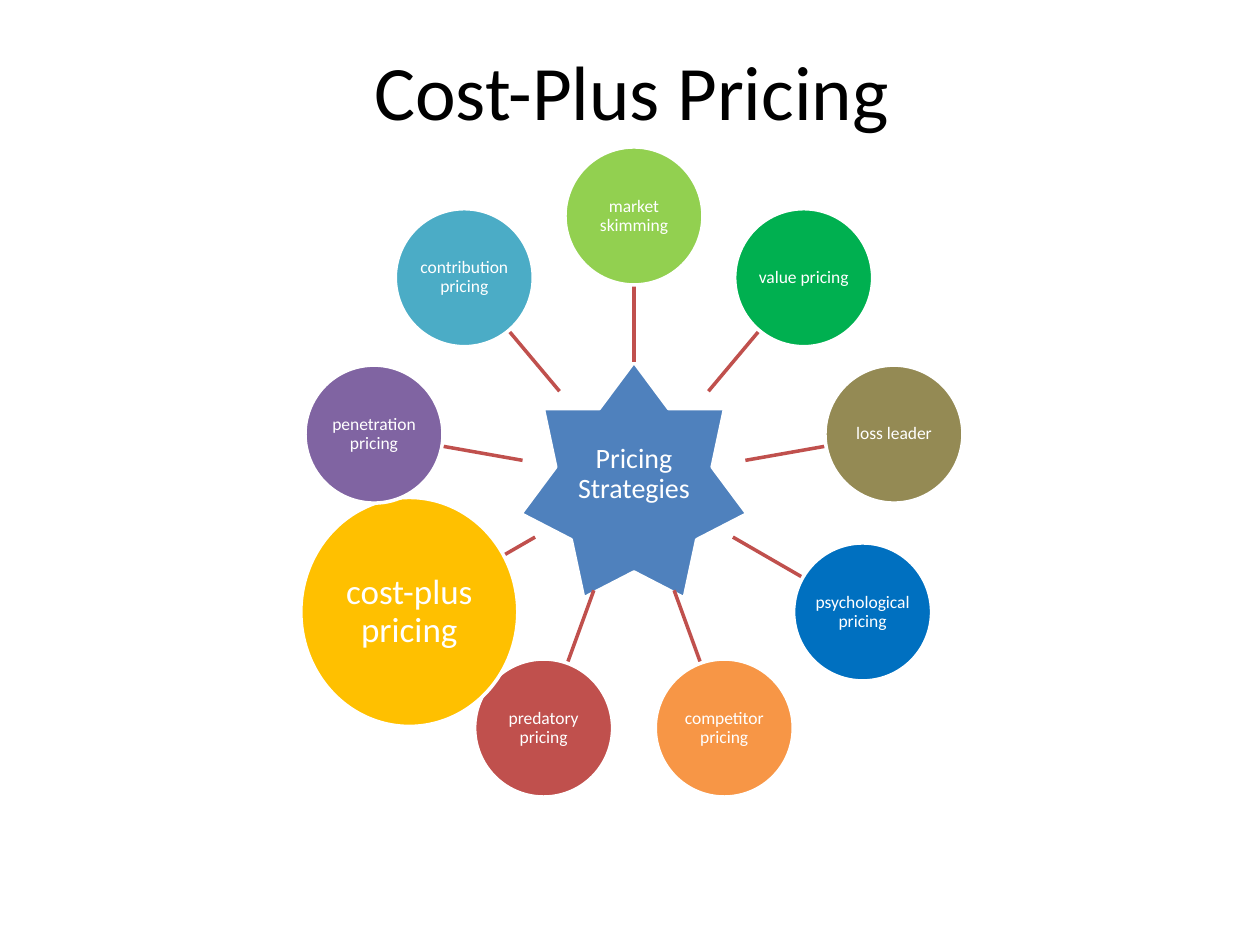
from math import cos, hypot, radians, sin

from lxml.etree import SubElement
from pptx import Presentation
from pptx.dml.color import RGBColor as RGB
from pptx.enum.shapes import MSO_CONNECTOR as LINE, MSO_SHAPE as SHAPE
from pptx.enum.text import MSO_ANCHOR as ANCHOR, PP_ALIGN as ALIGN
from pptx.oxml.ns import qn
from pptx.util import Inches, Pt

PX = Inches(1) / 126
FONT = "Calibri"
BLACK = RGB(0x00, 0x00, 0x00)
WHITE = RGB(0xFF, 0xFF, 0xFF)
BLUE = RGB(0x4F, 0x81, 0xBD)
RED = RGB(0xC0, 0x50, 0x4D)
LIME = RGB(0x92, 0xD0, 0x50)
GREEN = RGB(0x00, 0xB0, 0x50)
OLIVE = RGB(0x94, 0x8A, 0x54)
AZURE = RGB(0x00, 0x70, 0xC0)
ORANGE = RGB(0xF7, 0x96, 0x46)
GOLD = RGB(0xFF, 0xC0, 0x00)
PURPLE = RGB(0x80, 0x64, 0xA2)
TEAL = RGB(0x4B, 0xAC, 0xC6)

# Clockwise from the top
NODES = [
    ("market skimming", LIME),
    ("value pricing", GREEN),
    ("loss leader", OLIVE),
    ("psychological pricing", AZURE),
    ("competitor pricing", ORANGE),
    ("predatory pricing", RED),
    ("cost-plus pricing", GOLD),
    ("penetration pricing", PURPLE),
    ("contribution pricing", TEAL),
]
FOCUS = "cost-plus pricing"
HUB_X, HUB_Y = 634, 480
HUB_W, HUB_H = 226, 236
RING = 264
NODE = 138


def emu(*vals):
    return [round(v * PX) for v in vals]


class Page:
    """Holds the current slide and draws styled elements on it."""

    def __init__(self, deck):
        self.slide = deck.slides.add_slide(deck.slide_layouts[5])
        self.shapes = self.slide.shapes

    def label(self, frame, text, size, color):
        frame.word_wrap = True
        frame.vertical_anchor = ANCHOR.MIDDLE
        para = frame.paragraphs[0]
        para.alignment = ALIGN.CENTER
        run = para.add_run()
        run.text = text
        run.font.name = FONT
        run.font.size = Pt(size)
        run.font.color.rgb = color
        return para

    def title(self, text, x, y, w, h):
        box = self.shapes.title
        box.left, box.top, box.width, box.height = emu(x, y, w, h)
        self.label(box.text_frame, text, 44, BLACK)

    def node(self, kind, text, size, color, x, y, w, h):
        """Draw a labelled shape centred on x, y."""
        shape = self.shapes.add_shape(kind, *emu(x - w / 2, y - h / 2, w, h))
        shape.shadow.inherit = False
        shape.fill.solid()
        shape.fill.fore_color.rgb = color
        shape.line.color.rgb = WHITE
        shape.line.width = Pt(2)
        frame = shape.text_frame
        frame.margin_left = frame.margin_right = emu(1)[0]
        frame.margin_top = frame.margin_bottom = emu(1)[0]
        self.label(frame, text, size, WHITE).line_spacing = 0.9

    def link(self, x1, y1, x2, y2):
        line = self.shapes.add_connector(LINE.STRAIGHT, *emu(x1, y1, x2, y2))
        line.line.color.rgb = RED
        line.line.width = Pt(2)
        SubElement(line._element.spPr, qn("a:effectLst"))


def main():
    deck = Presentation()
    deck.slide_width, deck.slide_height = emu(1260, 945)
    page = Page(deck)
    page.title("Cost-Plus Pricing ", 105, 37, 1071, 106)
    page.node(SHAPE.STAR_7_POINT, "Pricing Strategies", 16, BLUE,
              HUB_X, HUB_Y, HUB_W, HUB_H)

    for i, (text, color) in enumerate(NODES):
        turn = radians(360 / len(NODES) * i)
        dx, dy = sin(turn), -cos(turn)
        x, y = HUB_X + RING * dx, HUB_Y + RING * dy
        size, w, h, end = 10, NODE, NODE, 195
        if text == FOCUS:
            size, w, h, end = 20, 217, 229, 150
            x += 4
        # Links start on the ellipse around the hub
        start = 1 / hypot(2 * dx / HUB_W, 2 * dy / HUB_H)
        page.link(HUB_X + start * dx, HUB_Y + start * dy,
                  HUB_X + end * dx, HUB_Y + end * dy)
        page.node(SHAPE.OVAL, text, size, color, x, y, w, h)

    deck.save("out.pptx")


if __name__ == "__main__":
    main()
